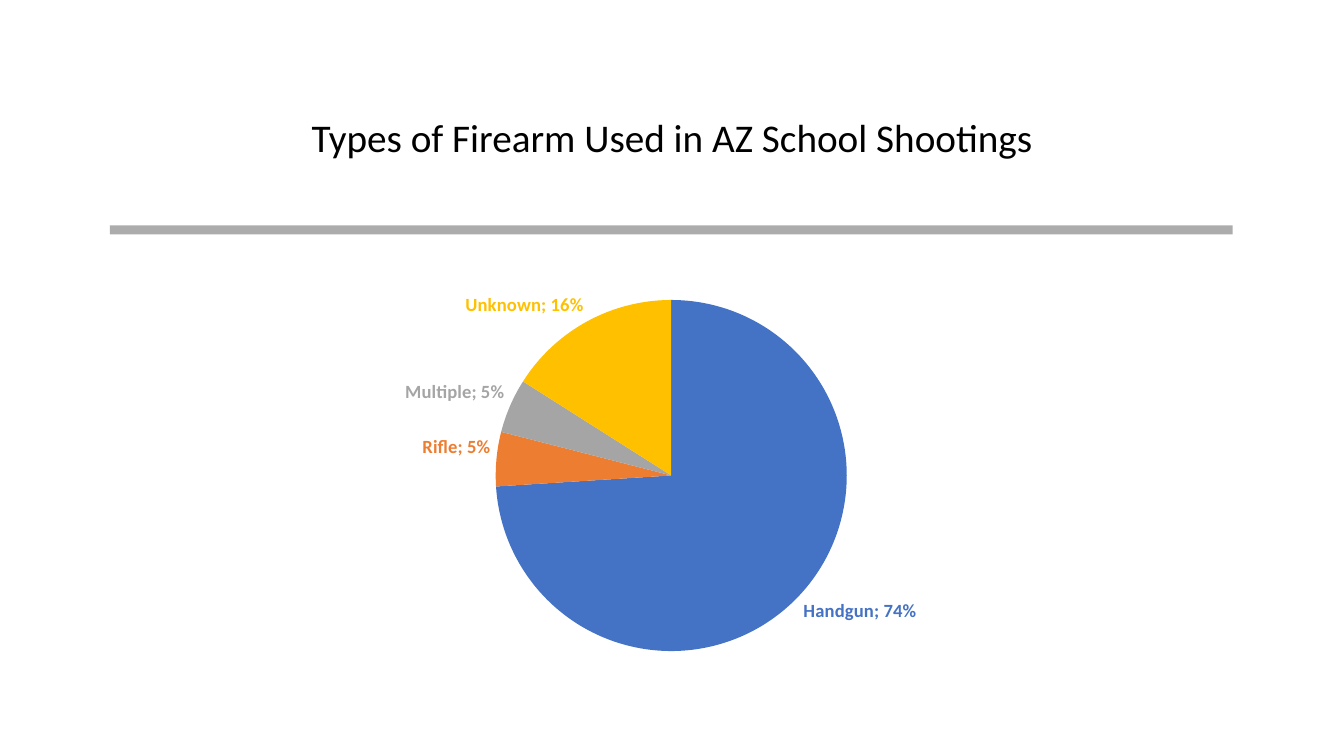
import dataclasses

import lxml.etree
import pptx
import pptx.chart.data
import pptx.dml.color
import pptx.enum.chart
import pptx.enum.shapes
import pptx.enum.text
import pptx.oxml
import pptx.oxml.ns
import pptx.util

Pt = pptx.util.Pt
qn = pptx.oxml.ns.qn
FONT = "Calibri"


@dataclasses.dataclass
class Frame:
    left: float
    top: float
    width: float
    height: float

    def lengths(self) -> list:
        return [Pt(n) for n in (self.left, self.top, self.width, self.height)]


@dataclasses.dataclass
class Slice:
    firearm: str
    share: float
    colour: str


SLICES = [
    Slice("Handgun", 0.74, "4472C4"),
    Slice("Rifle", 0.05, "ED7D31"),
    Slice("Multiple", 0.05, "A5A5A5"),
    Slice("Unknown", 0.16, "FFC000"),
]
TITLE_FRAME = Frame(68.4, 47.5, 823, 104.4)
RULE_FRAME = Frame(78.5, 161, 802, 6.5)
CHART_FRAME = Frame(78.5, 191.5, 802, 285)
# Share of the chart area that the pie takes up
PIE_LAYOUT = {"x": 0.34, "y": 0.08, "w": 0.32, "h": 0.88}


def rgb(value: str) -> pptx.dml.color.RGBColor:
    return pptx.dml.color.RGBColor.from_string(value)


def style_font(font, size: float, colour: str, bold: bool = False) -> None:
    font.name = FONT
    font.size = Pt(size)
    font.bold = bold
    font.color.rgb = rgb(colour)


def add_title(page, frame: Frame, text: str) -> None:
    box = page.shapes.add_textbox(*frame.lengths())
    box.text_frame.word_wrap = True
    box.text_frame.vertical_anchor = pptx.enum.text.MSO_ANCHOR.MIDDLE
    box.text_frame.text = text
    para = box.text_frame.paragraphs[0]
    para.alignment = pptx.enum.text.PP_ALIGN.CENTER
    para.line_spacing = 0.9
    for span in para.runs:
        style_font(span.font, 28, "000000")


def add_rule(page, frame: Frame, colour: str, opacity: int) -> None:
    rule = page.shapes.add_shape(
        pptx.enum.shapes.MSO_SHAPE.RECTANGLE, *frame.lengths())
    rule.shadow.inherit = False
    rule.line.fill.background()
    rule.fill.solid()
    rule.fill.fore_color.rgb = rgb(colour)
    fill_colour = rule.fill._xPr.find(qn("a:solidFill"))[0]
    alpha = lxml.etree.SubElement(fill_colour, qn("a:alpha"))
    alpha.set("val", str(opacity * 1000))


def place_pie(chart) -> None:
    plot_area = chart._chartSpace.chart.plotArea
    for old_layout in plot_area.findall(qn("c:layout")):
        plot_area.remove(old_layout)
    layout = pptx.oxml.ns.qn("c:layout")
    manual = lxml.etree.SubElement(
        lxml.etree.Element(layout), qn("c:manualLayout"))
    settings = {"layoutTarget": "inner", "xMode": "edge", "yMode": "edge",
                **PIE_LAYOUT}
    for name, value in settings.items():
        lxml.etree.SubElement(manual, qn(f"c:{name}")).set("val", str(value))
    plot_area.insert(0, manual.getparent())


def style_slice(series, index: int, piece: Slice) -> None:
    point = series.points[index]
    point.format.fill.solid()
    point.format.fill.fore_color.rgb = rgb(piece.colour)
    point.format.line.fill.background()
    style_font(point.data_label.font, 13.3, piece.colour, bold=True)
    point.data_label.position = pptx.enum.chart.XL_LABEL_POSITION.OUTSIDE_END


def complete_labels(series) -> None:
    for label in series._element.iter(qn("c:dLbl")):
        label.find(qn("c:showCatName")).set("val", "1")
        separator = lxml.etree.SubElement(label, qn("c:separator"))
        separator.text = "; "


def add_pie(page, frame: Frame, slices: list[Slice]) -> None:
    data = pptx.chart.data.CategoryChartData(number_format="0%")
    data.categories = [piece.firearm for piece in slices]
    data.add_series("Series 1", [piece.share for piece in slices])
    chart = page.shapes.add_chart(
        pptx.enum.chart.XL_CHART_TYPE.PIE, *frame.lengths(), data).chart
    chart.has_title = False
    chart.has_legend = False
    style_font(chart.font, 10, "000000")
    chart.plots[0].vary_by_categories = True
    series = chart.plots[0].series[0]
    for index, piece in enumerate(slices):
        style_slice(series, index, piece)
    complete_labels(series)
    place_pie(chart)


def main() -> None:
    deck = pptx.Presentation()
    deck.slide_width = Pt(960)
    deck.slide_height = Pt(540)
    page = deck.slides.add_slide(deck.slide_layouts[6])
    # Heading with the grey rule below it
    add_title(page, TITLE_FRAME, "Types of Firearm Used in AZ School Shootings")
    add_rule(page, RULE_FRAME, "808080", 65)
    # Shares by firearm type
    add_pie(page, CHART_FRAME, SLICES)
    deck.save("out.pptx")


if __name__ == "__main__":
    main()
